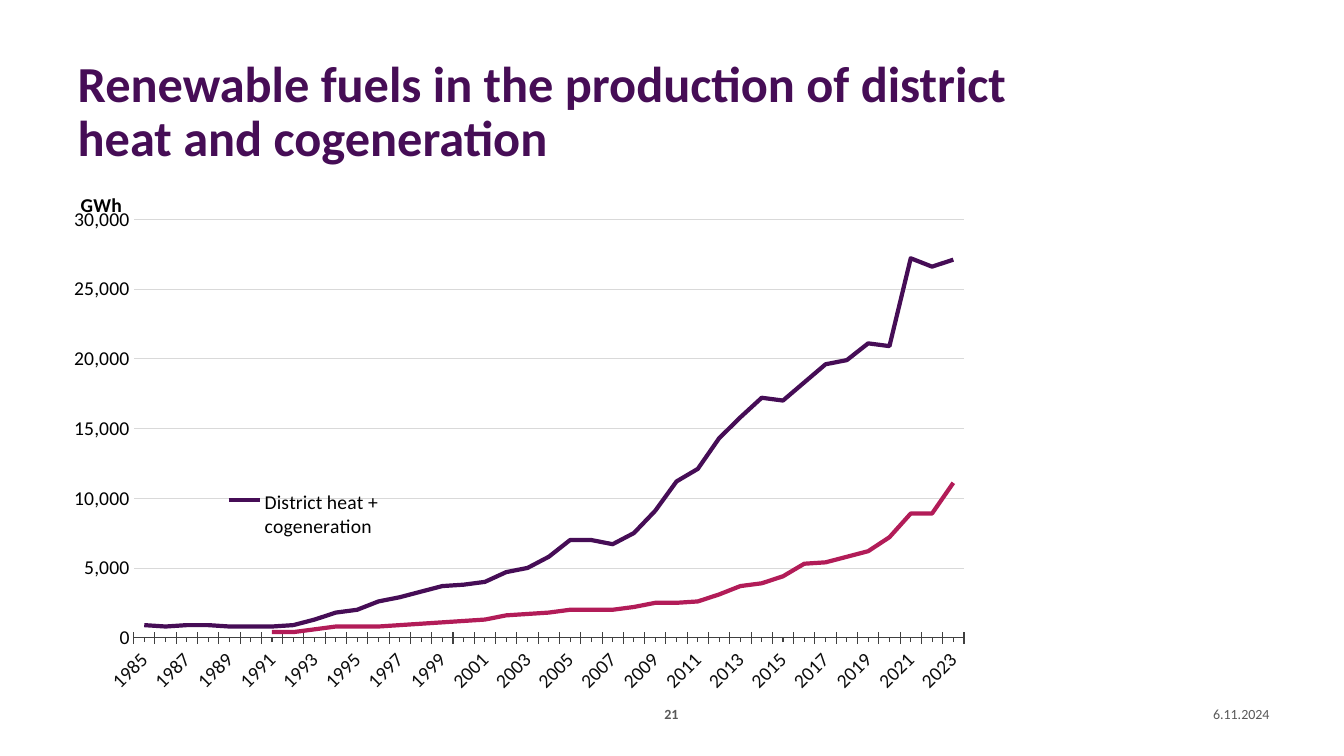
"""Build a slide with a line chart of renewable fuels in heat production."""
from lxml import etree
from pptx import Presentation
from pptx import util as u
from pptx.chart.data import CategoryChartData
from pptx.dml.color import RGBColor
from pptx.enum import chart as charts, text
from pptx.oxml import ns

PURPLE = RGBColor(0x46, 0x0D, 0x56)
CRIMSON = RGBColor(0xB2, 0x1C, 0x58)
BLACK = RGBColor(0, 0, 0)
NEAR_BLACK = RGBColor(0x0D, 0x0D, 0x0D)
AXIS_GREY = RGBColor(0x40, 0x40, 0x40)
FOOTER_GREY = RGBColor(0x59, 0x59, 0x59)
GRID_GREY = RGBColor(0xD9, 0xD9, 0xD9)

YEARS = [str(year) for year in range(1985, 2024)]
TOTAL = [900, 800, 900, 900, 800, 800, 800, 900, 1300, 1800, 2000, 2600, 2900,
         3300, 3700, 3800, 4000, 4700, 5000, 5800, 7000, 7000, 6700, 7500, 9100,
         11200, 12100, 14300, 15800, 17200, 17000, 18300, 19600, 19900, 21100,
         20900, 27200, 26600, 27100]
SEPARATE = [None] * 6 + [
    400, 400, 600, 800, 800, 800, 900, 1000, 1100, 1200, 1300, 1600, 1700, 1800,
    2000, 2000, 2000, 2200, 2500, 2500, 2600, 3100, 3700, 3900, 4400, 5300, 5400,
    5800, 6200, 7200, 8900, 8900, 11100]
SERIES = [("District heat + cogeneration", TOTAL, PURPLE),
          ("Separate production of DH", SEPARATE, CRIMSON)]


class SlideBuilder:
    """Hold the style and the current slide, and add each kind of element."""

    font_name = "Calibri"

    def __init__(self, deck):
        self.page = deck.slides.add_slide(deck.slide_layouts[5])

    def style(self, font, size, color, bold=False):
        font.name = self.font_name
        font.size = u.Pt(size)
        font.bold = bold
        font.color.rgb = color

    def fill_text(self, box, wording, size, color, bold, align):
        frame = box.text_frame
        frame.word_wrap = True
        frame.auto_size = text.MSO_AUTO_SIZE.NONE
        frame.vertical_anchor = text.MSO_ANCHOR.MIDDLE
        para = frame.paragraphs[0]
        para.alignment = align
        span = para.add_run()
        span.text = wording
        self.style(span.font, size, color, bold)
        return para

    def title(self, wording, left, top, width, height):
        box = self.page.shapes.title
        box.left, box.top = u.Inches(left), u.Inches(top)
        box.width, box.height = u.Inches(width), u.Inches(height)
        para = self.fill_text(box, wording, 36, PURPLE, True, text.PP_ALIGN.LEFT)
        para.line_spacing = 0.9

    def footer(self, wording, left, width, align, bold=False):
        box = self.page.shapes.add_textbox(
            u.Inches(left), u.Inches(6.95), u.Inches(width), u.Inches(0.27))
        para = self.fill_text(box, wording, 10, FOOTER_GREY, bold, align)
        para.space_after = u.Pt(6)

    def add_value(self, parent, tag, value):
        etree.SubElement(parent, ns.qn(tag)).set("val", str(value))

    def place(self, part, index, left, top, width=None, height=None, inner=False):
        for old in part.findall(ns.qn("c:layout")):
            part.remove(old)
        layout = etree.Element(ns.qn("c:layout"))
        manual = etree.SubElement(layout, ns.qn("c:manualLayout"))
        if inner:
            self.add_value(manual, "c:layoutTarget", "inner")
        for tag in ("c:xMode", "c:yMode"):
            self.add_value(manual, tag, "edge")
        for tag, value in zip("xywh", (left, top, width, height)):
            if value is not None:
                self.add_value(manual, "c:" + tag, value)
        part.insert(index, layout)

    def line_chart(self, left, top, width, height):
        data = CategoryChartData(number_format="#,##0")
        data.categories = YEARS
        for name, values, _ in SERIES:
            data.add_series(name, values)
        chart = self.page.shapes.add_chart(
            charts.XL_CHART_TYPE.LINE, u.Inches(left), u.Inches(top),
            u.Inches(width), u.Inches(height), data).chart
        chart.has_title = False
        self.style(chart.font, 10, BLACK)
        plot = chart.plots[0]
        plot.vary_by_categories = False
        for series, (_, _, color) in zip(plot.series, SERIES):
            series.smooth = False
            series.format.line.color.rgb = color
            series.format.line.width = u.Pt(3)
            series.marker.style = charts.XL_MARKER_STYLE.NONE
        plot_area = chart.element.find(".//" + ns.qn("c:plotArea"))
        self.place(plot_area, 0, 0.07, 0.08, 0.88, 0.8, inner=True)
        self.year_axis(chart.category_axis)
        self.energy_axis(chart.value_axis)
        self.legend(chart)

    def year_axis(self, axis):
        axis.has_major_gridlines = False
        axis.major_tick_mark = charts.XL_TICK_MARK.CROSS
        axis.minor_tick_mark = charts.XL_TICK_MARK.OUTSIDE
        axis.format.line.color.rgb = AXIS_GREY
        axis.format.line.width = u.Pt(0.75)
        self.style(axis.tick_labels.font, 14, NEAR_BLACK)
        root = axis.tick_labels._element
        body = root.find(ns.qn("c:txPr")).find(ns.qn("a:bodyPr"))
        body.set("rot", str(-45 * 60000))
        body.set("vert", "horz")
        skip = etree.Element(ns.qn("c:tickLblSkip"))
        skip.set("val", "2")
        root.find(ns.qn("c:noMultiLvlLbl")).addprevious(skip)

    def energy_axis(self, axis):
        axis.minimum_scale, axis.maximum_scale, axis.major_unit = 0, 30000, 5000
        axis.major_tick_mark = charts.XL_TICK_MARK.NONE
        axis.format.line.fill.background()
        axis.major_gridlines.format.line.color.rgb = GRID_GREY
        axis.major_gridlines.format.line.width = u.Pt(0.5)
        axis.tick_labels.number_format = "#,##0"
        axis.tick_labels.number_format_is_linked = False
        self.style(axis.tick_labels.font, 14, BLACK)
        axis.has_title = True
        frame = axis.axis_title.text_frame
        span = frame.paragraphs[0].add_run()
        span.text = "GWh"
        self.style(span.font, 14, BLACK, True)
        title = axis.axis_title._element
        body = title.find(".//" + ns.qn("a:bodyPr"))
        body.set("rot", "0")
        body.set("vert", "horz")
        self.place(title, 1, 0.01, 0.02)

    def legend(self, chart):
        chart.has_legend = True
        legend = chart.legend
        legend.position = charts.XL_LEGEND_POSITION.RIGHT
        legend.include_in_layout = False
        self.style(legend.font, 14, BLACK)
        root = legend._element
        self.place(root, 1, 0.15, 0.58, 0.2, 0.13)
        entry = etree.Element(ns.qn("c:legendEntry"))
        self.add_value(entry, "c:idx", 1)
        self.add_value(entry, "c:delete", 1)
        root.insert(1, entry)


def main():
    deck = Presentation()
    deck.slide_width, deck.slide_height = u.Inches(13.33), u.Inches(7.5)
    builder = SlideBuilder(deck)
    builder.title("Renewable fuels in the production of district heat and cogeneration",
                  0.67, 0.4, 10.37, 1.45)
    builder.footer("6.11.2024", 11.58, 1.11, text.PP_ALIGN.RIGHT)
    builder.footer("21", 6.36, 0.6, text.PP_ALIGN.CENTER, bold=True)
    builder.line_chart(0.67, 1.76, 9.36, 5.19)
    deck.save("out.pptx")


if __name__ == "__main__":
    main()
